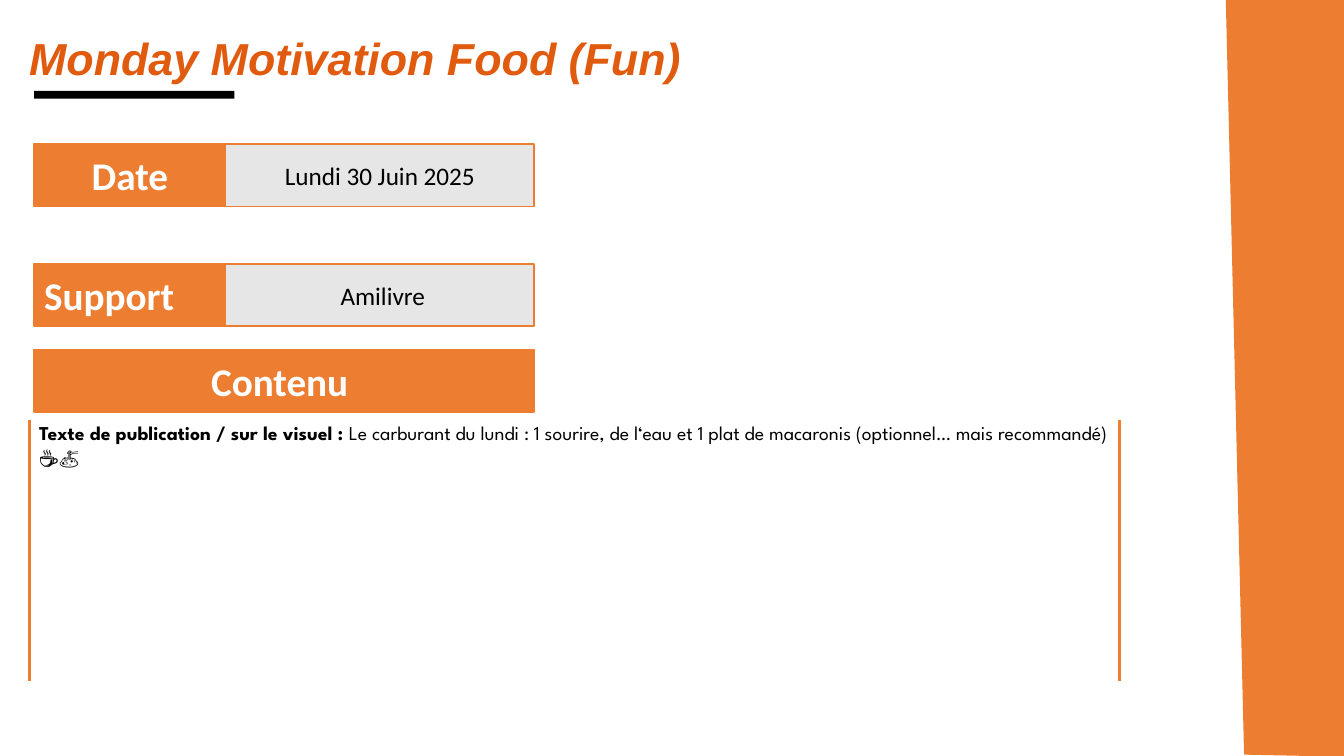
from dataclasses import dataclass

from lxml import etree
from pptx import Presentation
from pptx.dml.color import RGBColor
from pptx.enum import shapes, text
from pptx.oxml.ns import qn
from pptx.util import Cm, Pt


@dataclass(frozen=True)
class Theme:
    orange: RGBColor = RGBColor(0xED, 0x7D, 0x31)
    title: RGBColor = RGBColor(0xE1, 0x5B, 0x0F)
    grey: RGBColor = RGBColor(0xE7, 0xE6, 0xE6)
    black: RGBColor = RGBColor(0, 0, 0)
    white: RGBColor = RGBColor(0xFF, 0xFF, 0xFF)
    title_size: Pt = Pt(32)
    label_size: Pt = Pt(28)
    value_size: Pt = Pt(18)
    body_size: Pt = Pt(14)
    title_font: str = "Arial"
    box_font: str = "Calibri"
    body_font: str = "League Spartan"


THEME = Theme()
LEFT = 0.86
LABEL_WIDTH = 4.83
VALUE_WIDTH = 7.77
BOX_HEIGHT = 1.57


@dataclass(frozen=True)
class Field:
    """One row: an orange label, with a grey value beside it or across the full width."""
    top: float
    label: str
    value: str = ""
    alignment: text.PP_ALIGN = text.PP_ALIGN.CENTER


FIELDS = [
    Field(3.63, "Date", "Lundi 30 Juin 2025"),
    Field(6.65, "Support", " Amilivre", text.PP_ALIGN.LEFT),
    Field(8.81, "Contenu "),
]


def style_font(font, name: str, size: Pt, color: RGBColor, bold: bool = False) -> None:
    font.name, font.size, font.bold = name, size, bold
    font.color.rgb = color


def add_box(slide, left: float, top: float, width: float, height: float, fill: RGBColor):
    box = slide.shapes.add_shape(
        shapes.MSO_SHAPE.RECTANGLE, Cm(left), Cm(top), Cm(width), Cm(height))
    box.shadow.inherit = False
    box.fill.solid()
    box.fill.fore_color.rgb = fill
    box.line.fill.background()
    return box


def add_cell(slide, left: float, top: float, width: float, words: str,
             alignment: text.PP_ALIGN, is_label: bool) -> None:
    fill = THEME.orange if is_label else THEME.grey
    cell = add_box(slide, left, top, width, BOX_HEIGHT, fill)
    cell.line.color.rgb = THEME.orange
    cell.line.width = Pt(1)
    frame = cell.text_frame
    frame.vertical_anchor = text.MSO_ANCHOR.MIDDLE
    paragraph = frame.paragraphs[0]
    paragraph.text = words
    paragraph.alignment = alignment
    size = THEME.label_size if is_label else THEME.value_size
    color = THEME.white if is_label else THEME.black
    style_font(paragraph.font, THEME.box_font, size, color, is_label)


def add_field(slide, field: Field) -> None:
    width = LABEL_WIDTH if field.value else LABEL_WIDTH + VALUE_WIDTH
    add_cell(slide, LEFT, field.top, width, field.label, field.alignment, True)
    if field.value:
        add_cell(slide, LEFT + LABEL_WIDTH, field.top, VALUE_WIDTH, field.value,
                 text.PP_ALIGN.CENTER, False)


def add_side_band(slide) -> None:
    builder = slide.shapes.build_freeform(Cm(30.91), Cm(0))
    corners = [(33.86, 0), (33.88, 19.05), (31.37, 19)]
    builder.add_line_segments([(Cm(x), Cm(y)) for x, y in corners], close=True)
    band = builder.convert_to_shape()
    band.shadow.inherit = False
    band.fill.solid()
    band.fill.fore_color.rgb = THEME.orange
    band.line.color.rgb = THEME.orange
    band.line.width = Pt(1)


def add_side_rule(slide, x: float) -> None:
    rule = slide.shapes.add_connector(
        shapes.MSO_CONNECTOR.STRAIGHT, Cm(x), Cm(10.59), Cm(x), Cm(17.17))
    rule.line.color.rgb = THEME.orange
    rule.line.width = Pt(2.25)
    etree.SubElement(rule._element.spPr, qn("a:effectLst"))


def fill_title(slide) -> None:
    title = slide.shapes.title
    title.left, title.top, title.width, title.height = Cm(0.48), Cm(0.64), Cm(28.02), Cm(1.32)
    frame = title.text_frame
    frame.vertical_anchor = text.MSO_ANCHOR.TOP
    frame.auto_size = text.MSO_AUTO_SIZE.NONE
    paragraph = frame.paragraphs[0]
    paragraph.text = "Monday Motivation Food (Fun)"
    paragraph.alignment = text.PP_ALIGN.JUSTIFY
    style_font(paragraph.font, THEME.title_font, THEME.title_size, THEME.title, True)
    paragraph.font.italic = True


def add_post_text(slide) -> None:
    post = slide.shapes.add_textbox(Cm(0.74), Cm(10.49), Cm(27.48), Cm(1.96))
    frame = post.text_frame
    frame.word_wrap = True
    frame.auto_size = text.MSO_AUTO_SIZE.SHAPE_TO_FIT_TEXT
    paragraph = frame.paragraphs[0]
    style_font(paragraph.font, THEME.body_font, THEME.body_size, THEME.black)
    heading = paragraph.add_run()
    heading.text = "Texte de publication / sur le visuel : "
    heading.font.bold = True
    message = paragraph.add_run()
    message.text = ("Le carburant du lundi : 1 sourire, de l‘eau et 1 plat de macaronis "
                    "(optionnel… mais recommandé) ☕🍝")


def main() -> None:
    presentation = Presentation()
    presentation.slide_width, presentation.slide_height = Cm(33.87), Cm(19.05)
    slide = presentation.slides.add_slide(presentation.slide_layouts.get_by_name("Title Only"))
    fill_title(slide)
    add_side_band(slide)
    add_box(slide, LEFT, 2.29, 5.05, 0.2, THEME.black)
    for field in FIELDS:
        add_field(slide, field)
    for x in (0.74, 28.22):
        add_side_rule(slide, x)
    add_post_text(slide)
    presentation.save("out.pptx")


if __name__ == "__main__":
    main()
